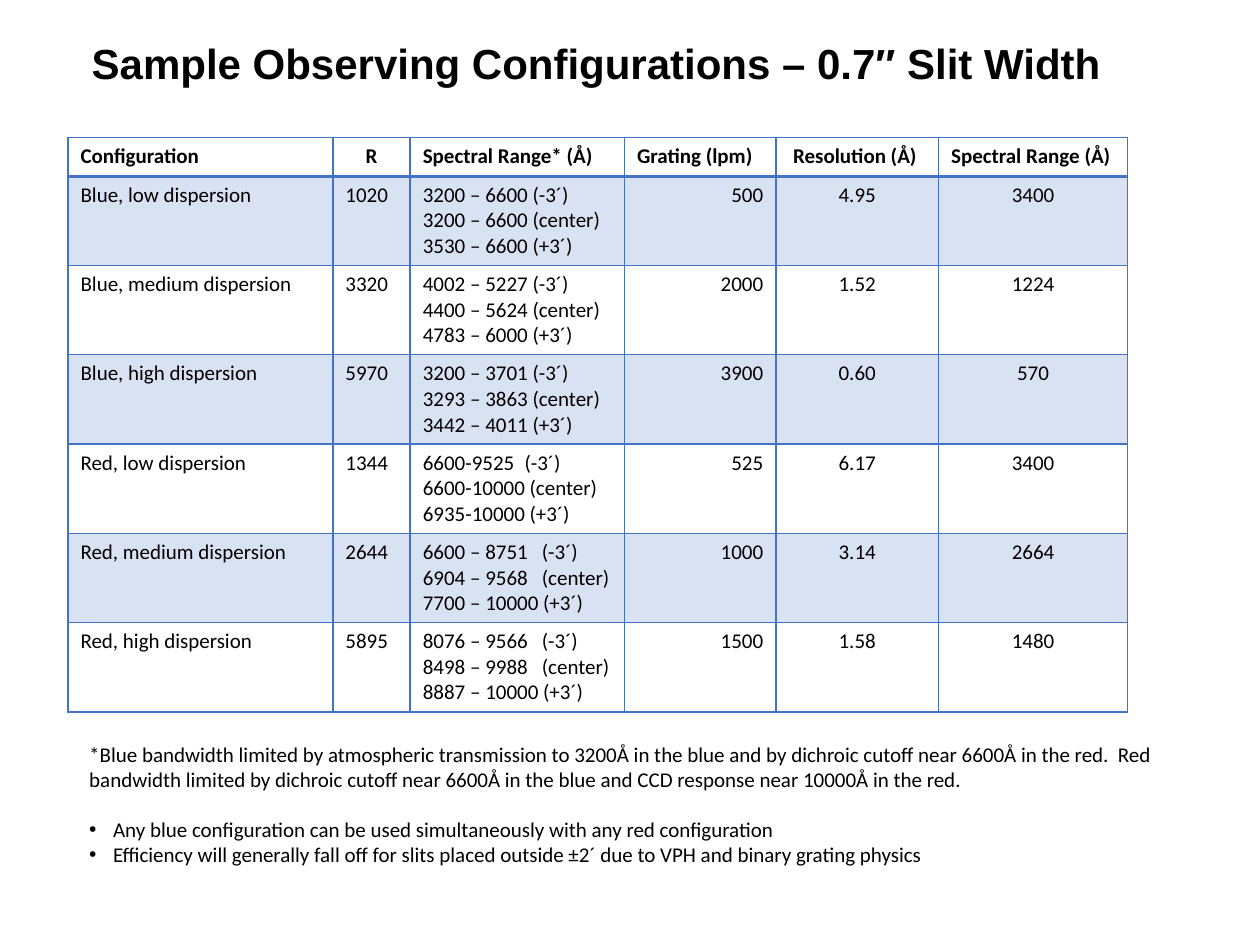
from lxml.etree import SubElement
from pptx import Presentation
from pptx.dml.color import RGBColor
from pptx.enum.text import MSO_ANCHOR, PP_ALIGN
from pptx.oxml.ns import qn
from pptx.util import Cm, Pt

BLACK = RGBColor(0, 0, 0)
BLUE = RGBColor(0x44, 0x72, 0xC4)
TINT = 20  # opacity of the row bands, percent

LEFT, MID, RIGHT = PP_ALIGN.LEFT, PP_ALIGN.CENTER, PP_ALIGN.RIGHT
WIDTHS = [5.34, 1.56, 4.32, 3.05, 3.28, 3.81]
HEAD_H, ROW_H = 0.78, 1.8
TABS = [2.05, 2.4]  # stops for the slit offsets

HEADS = ["Configuration", "R", "Spectral Range* (Å)", "Grating (lpm)",
         " Resolution (Å)", "Spectral Range (Å)"]
HEAD_AL = [LEFT, MID, LEFT, LEFT, LEFT, LEFT]
BODY_AL = [LEFT, LEFT, LEFT, RIGHT, MID, MID]
ROWS = [
    ["Blue, low dispersion", "1020",
     "3200 – 6600 (-3´)\n3200 – 6600 (center)\n3530 – 6600 (+3´)",
     "500", "4.95", "3400"],
    ["Blue, medium dispersion", "3320",
     "4002 – 5227 (-3´)\n4400 – 5624 (center)\n4783 – 6000 (+3´)",
     "2000", "1.52", "1224"],
    ["Blue, high dispersion", "5970",
     "3200 – 3701 (-3´)\n3293 – 3863 (center)\n3442 – 4011 (+3´)",
     "3900", "0.60", "570"],
    ["Red, low dispersion", "1344",
     "6600-9525\t(-3´)\n6600-10000 (center)\n6935-10000 (+3´)",
     "525", "6.17", "3400"],
    ["Red, medium dispersion", "2644",
     "6600 – 8751\t(-3´)\n6904 – 9568\t(center)\n7700 – 10000 (+3´)",
     "1000", "3.14", "2664"],
    ["Red, high dispersion", "5895",
     "8076 – 9566\t(-3´)\n8498 – 9988\t(center)\n8887 – 10000 (+3´)",
     "1500", "1.58", "1480"],
]

NOTE = ("*Blue bandwidth limited by atmospheric transmission to 3200Å in the "
        "blue and by dichroic cutoff near 6600Å in the red.  Red bandwidth "
        "limited by dichroic cutoff near 6600Å in the blue and CCD response "
        "near 10000Å in the red.")
POINTS = [
    "Any blue configuration can be used simultaneously with any red "
    "configuration",
    "Efficiency will generally fall off for slits placed outside ±2´ due to "
    "VPH and binary grating physics",
]


def style(para, size=12, name="Calibri", bold=False, align=LEFT):
    font = para.font
    font.size, font.name, font.bold = Pt(size), name, bold
    font.color.rgb = BLACK
    para.alignment = align


def add_text(slide, left, top, width, height, lines):
    frame = slide.shapes.add_textbox(
        Cm(left), Cm(top), Cm(width), Cm(height)).text_frame
    frame.word_wrap = True
    frame.text = "\n".join(lines)
    return frame


def set_tabs(para):
    stops = SubElement(para._p.get_or_add_pPr(), qn("a:tabLst"))
    for pos in TABS:
        SubElement(stops, qn("a:tab"), pos=str(Cm(pos)), algn="l")


def set_bullet(para):
    props = para._p.get_or_add_pPr()
    indent = Cm(0.48)
    props.set("marL", str(indent))
    props.set("indent", str(-indent))
    SubElement(props, qn("a:buFont"), typeface="Arial")
    SubElement(props, qn("a:buChar"), char="•")


def add_blue(parent, alpha=100):
    fill = SubElement(parent, qn("a:solidFill"))
    color = SubElement(fill, qn("a:srgbClr"), val=str(BLUE))
    if alpha < 100:
        SubElement(color, qn("a:alpha"), val=str(alpha * 1000))


def dress_cell(cell, row):
    props = cell._tc.get_or_add_tcPr()
    # The rule under the heading is twice as thick
    thick = {"lnT": row == 1, "lnB": row == 0}
    for side in ("lnL", "lnR", "lnT", "lnB"):
        width = Pt(2 if thick.get(side) else 1)
        add_blue(SubElement(props, qn("a:" + side), w=str(width)))
    if row % 2:
        add_blue(props, TINT)
    else:
        cell.fill.background()


def fill_cell(cell, text, row, align):
    cell.text = text
    for para in cell.text_frame.paragraphs:
        style(para, bold=row == 0, align=align)
        if "\t" in para.text:
            set_tabs(para)
    dress_cell(cell, row)


def add_grid(slide):
    table = slide.shapes.add_table(
        len(ROWS) + 1, len(HEADS), Cm(1.37), Cm(2.77), Cm(sum(WIDTHS)),
        Cm(HEAD_H + ROW_H * len(ROWS))).table
    for col, width in zip(table.columns, WIDTHS):
        col.width = Cm(width)
    for row, texts in enumerate([HEADS] + ROWS):
        table.rows[row].height = Cm(ROW_H if row else HEAD_H)
        aligns = BODY_AL if row else HEAD_AL
        for col, (text, align) in enumerate(zip(texts, aligns)):
            fill_cell(table.cell(row, col), text, row, align)


def main():
    deck = Presentation()
    deck.slide_width, deck.slide_height = Cm(25.4), Cm(19.05)
    slide = deck.slides.add_slide(deck.slide_layouts[6])

    # Title
    title = add_text(slide, 1.6, 0.58, 21.51, 1.5,
                     ["Sample Observing Configurations – 0.7″ Slit Width"])
    title.vertical_anchor = MSO_ANCHOR.MIDDLE
    title.paragraphs[0].line_spacing = 0.9
    style(title.paragraphs[0], 24, "Arial", True)

    # Table of configurations
    add_grid(slide)

    # Footnote and bullets
    notes = add_text(slide, 1.55, 14.83, 23.19, 2.82, [NOTE] + POINTS)
    for para in notes.paragraphs:
        style(para)
    first, *points = notes.paragraphs
    first.space_after = Pt(14)
    for para in points:
        set_bullet(para)

    deck.save("out.pptx")


if __name__ == "__main__":
    main()
